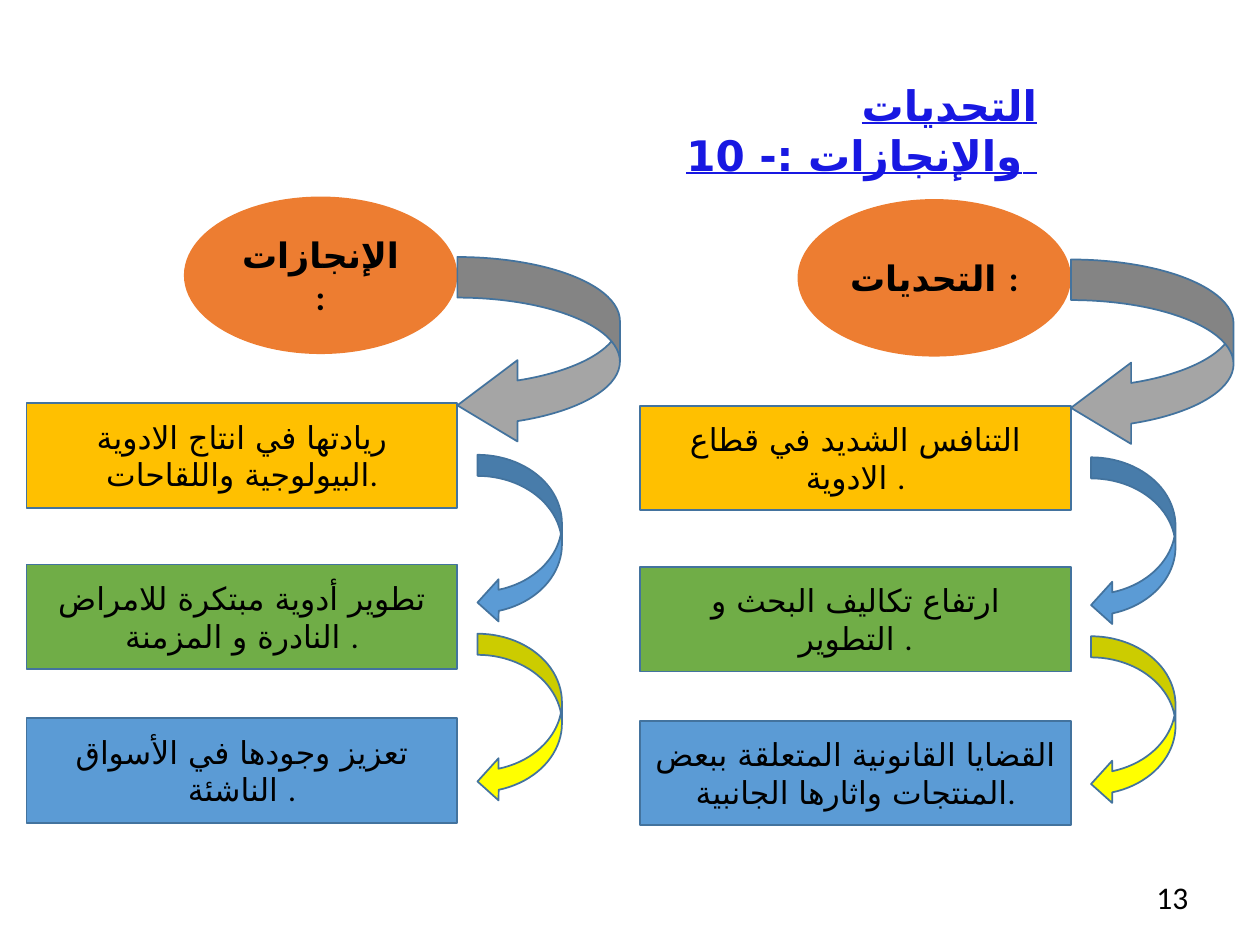
"""Build a slide listing challenges and achievements in two columns of linked boxes."""
import pptx
import pptx.util
import pptx.dml.color
import pptx.enum.shapes
import pptx.enum.text
import pptx.oxml.ns
import lxml.etree

Inches = pptx.util.Inches
Pt = pptx.util.Pt
RGBColor = pptx.dml.color.RGBColor
SHAPE = pptx.enum.shapes.MSO_SHAPE
ALIGN = pptx.enum.text.PP_ALIGN
ANCHOR = pptx.enum.text.MSO_ANCHOR

TITLE_BLUE = RGBColor(0x18, 0x18, 0xE2)
BLACK = RGBColor(0, 0, 0)
ORANGE = RGBColor(0xED, 0x7D, 0x31)
GOLD = RGBColor(0xFF, 0xC0, 0x00)
GREEN = RGBColor(0x70, 0xAD, 0x47)
BLUE = RGBColor(0x5B, 0x9B, 0xD5)
YELLOW = RGBColor(0xFF, 0xFF, 0x00)
GRAY = RGBColor(0xA5, 0xA5, 0xA5)
OUTLINE = RGBColor(0x43, 0x73, 0x9E)

LATIN_FONT, ARABIC_FONT = "Calibri", "DejaVu Sans"
TITLE = "التحديات والإنجازات :- 10 "
PAGE_NUMBER = "13"
COLUMNS = [
    {"left": 5.08, "top": 1.58, "heading": "التحديات :", "points": [
        "التنافس الشديد في قطاع الادوية .",
        "ارتفاع تكاليف البحث و التطوير .",
        "القضايا القانونية المتعلقة ببعض المنتجات واثارها الجانبية."]},
    {"left": 0.21, "top": 1.56, "heading": "الإنجازات :", "points": [
        "ريادتها في انتاج الادوية البيولوجية واللقاحات.",
        "تطوير أدوية مبتكرة للامراض النادرة و المزمنة .",
        "تعزيز وجودها في الأسواق الناشئة ."]},
]

BOX_WIDTH, BOX_HEIGHT = 3.42, 0.83
HEADING_WIDTH, HEADING_HEIGHT = 2.17, 1.25
BOX_ROWS = [(1.64, GOLD), (2.92, GREEN), (4.14, BLUE)]
ARROWS = [
    (0.16, 2.05, 0.67, 1.34, BLUE, None),
    (0.16, 3.47, 0.67, 1.34, YELLOW, None),
    (0, 0.48, 1.29, 1.5, GRAY, (0.25, 0.5, 0.37)),
]


def write(box, text, size, align, color=BLACK, bold=None, underline=None):
    frame = box.text_frame
    frame.word_wrap = True
    para = frame.paragraphs[0]
    para.text = text
    para.alignment = align
    span = para.runs[0]
    font = span.font
    font.name, font.size = LATIN_FONT, Pt(size)
    font.bold, font.underline = bold, underline
    font.color.rgb = color
    lxml.etree.SubElement(span._r.get_or_add_rPr(), pptx.oxml.ns.qn("a:cs"),
                          typeface=ARABIC_FONT)


def add_label(page, place, *style, **options):
    box = page.shapes.add_textbox(*map(Inches, place))
    write(box, *style, **options)
    box.text_frame.auto_size = pptx.enum.text.MSO_AUTO_SIZE.SHAPE_TO_FIT_TEXT


def add_shape(page, kind, place, fill, outlined=True):
    shape = page.shapes.add_shape(kind, *map(Inches, place))
    shape.shadow.inherit = False
    shape.fill.solid()
    shape.fill.fore_color.rgb = fill
    if outlined:
        shape.line.color.rgb = OUTLINE
        shape.line.width = Pt(1)
    else:
        shape.line.fill.background()
    shape.text_frame.vertical_anchor = ANCHOR.MIDDLE
    return shape


def add_column(page, column):
    left, top = column["left"], column["top"]
    right = left + BOX_WIDTH
    heading = add_shape(
        page, SHAPE.OVAL,
        (right - HEADING_WIDTH, top, HEADING_WIDTH, HEADING_HEIGHT),
        ORANGE, outlined=False)
    write(heading, column["heading"], 20, ALIGN.CENTER, bold=True)
    for text, (drop, fill) in zip(column["points"], BOX_ROWS):
        box = add_shape(page, SHAPE.RECTANGLE,
                        (left, top + drop, BOX_WIDTH, BOX_HEIGHT), fill)
        write(box, text, 18, ALIGN.CENTER)
    for gap, drop, width, height, fill, adjustments in ARROWS:
        arrow = add_shape(page, SHAPE.CURVED_LEFT_ARROW,
                          (right + gap, top + drop, width, height), fill)
        for index, value in enumerate(adjustments or ()):
            arrow.adjustments[index] = value


def main():
    deck = pptx.Presentation()
    deck.slide_width, deck.slide_height = Inches(10), Inches(7.5)
    page = deck.slides.add_slide(deck.slide_layouts[6])
    add_label(page, (4.58, 0.58, 3.75, 0.5), TITLE, 24, ALIGN.RIGHT,
              color=TITLE_BLUE, bold=True, underline=True)
    for column in COLUMNS:
        add_column(page, column)
    add_label(page, (9.08, 6.92, 0.71, 0.4), PAGE_NUMBER, 18, ALIGN.LEFT)
    deck.save("out.pptx")


if __name__ == "__main__":
    main()
